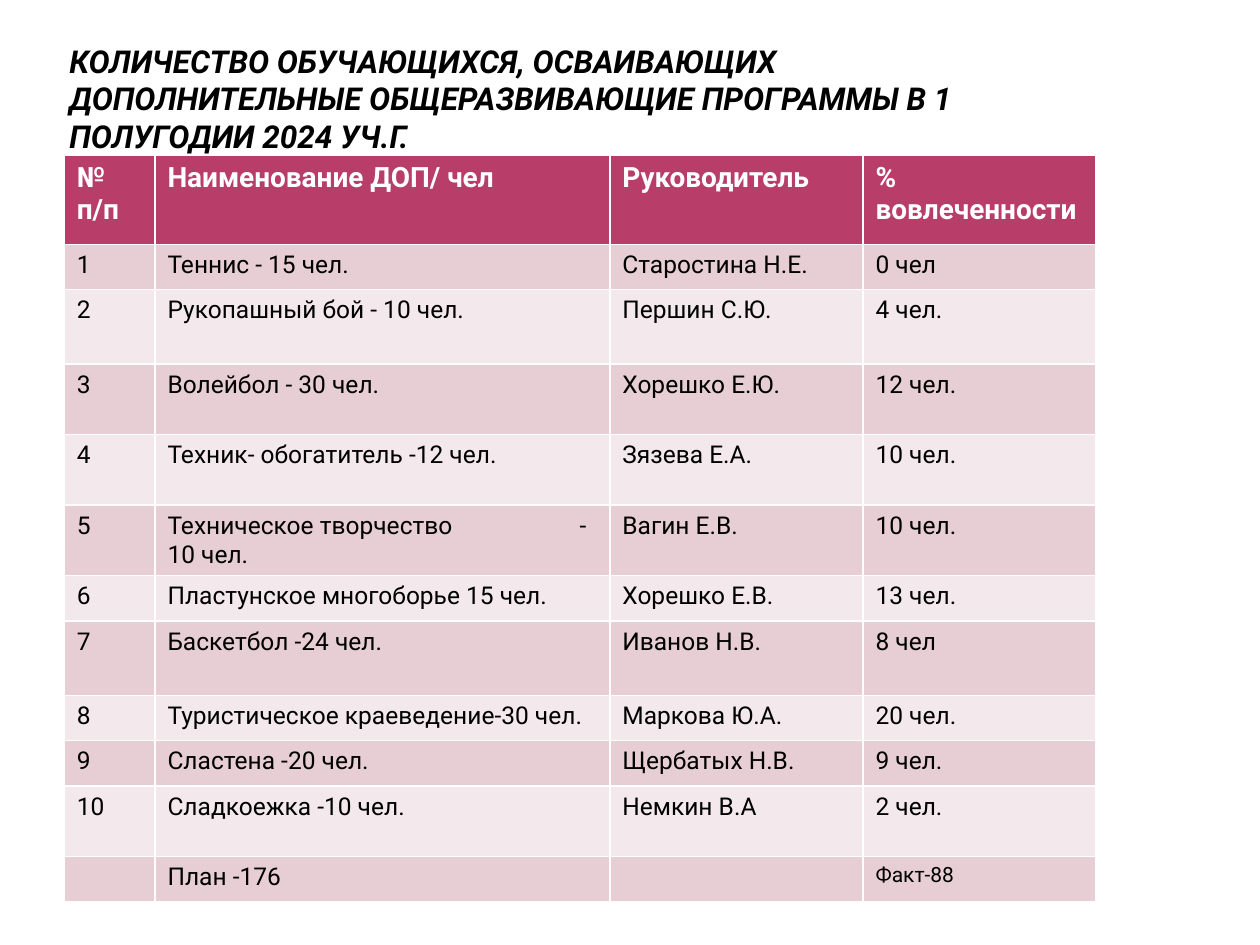
from lxml.etree import SubElement
from pptx import Presentation
from pptx.dml.color import RGBColor
from pptx.enum.text import MSO_ANCHOR, PP_ALIGN
from pptx.oxml.ns import qn
from pptx.util import Inches, Pt

BLACK = RGBColor(0x00, 0x00, 0x00)
WHITE = RGBColor(0xFF, 0xFF, 0xFF)
CRIMSON = RGBColor(0xB8, 0x3D, 0x68)
PINK = RGBColor(0xE6, 0xCE, 0xD4)
PALE_PINK = RGBColor(0xF3, 0xE8, 0xEB)
FONT = "Roboto"

HEADINGS = ("№ п/п", "Наименование ДОП/ чел", "Руководитель", "% вовлеченности")
COLUMN_WIDTHS = (0.72, 3.61, 2.01, 1.85)
HEADER_HEIGHT, LOW, MIDDLE, HIGH = 0.71, 0.36, 0.56, 0.59
DASH_TAB = 3.27

# Row height, programme, leader, involvement
PROGRAMMES = [
    (LOW, "Теннис - 15 чел.", "Старостина Н.Е.", "0 чел"),
    (HIGH, "Рукопашный бой - 10 чел.", "Першин С.Ю.", "4 чел."),
    (MIDDLE, "Волейбол - 30 чел.", "Хорешко Е.Ю.", "12 чел."),
    (MIDDLE, "Техник- обогатитель -12 чел.", "Зязева Е.А.", "10 чел."),
    (MIDDLE, "Техническое творчество\t- 10 чел.", "Вагин Е.В.", "10 чел."),
    (LOW, "Пластунское многоборье 15 чел.", "Хорешко Е.В.", "13 чел."),
    (HIGH, "Баскетбол -24 чел.", "Иванов Н.В.", "8 чел"),
    (LOW, "Туристическое краеведение-30 чел.", "Маркова Ю.А.", "20 чел."),
    (LOW, "Сластена -20 чел.", "Щербатых Н.В.", "9 чел."),
    (MIDDLE, "Сладкоежка -10 чел.", "Немкин В.А", "2 чел."),
]
TOTALS = ("", "План -176", "", "Факт-88")


def format_font(font, size, color, bold, italic=False):
    for name, value in {"name": FONT, "size": Pt(size), "bold": bold, "italic": italic}.items():
        setattr(font, name, value)
    font.color.rgb = color


prs = Presentation()
prs.slide_width, prs.slide_height = Inches(10), Inches(7.5)
slide = prs.slides.add_slide(prs.slide_layouts[5])

# Title
title = slide.shapes.title
title.left, title.top = Inches(0.5), Inches(0.35)
title.width, title.height = Inches(7.92), Inches(0.88)
frame_format = {
    "margin_left": Inches(0.05), "margin_right": Inches(0.05),
    "margin_top": 0, "margin_bottom": 0,
    "vertical_anchor": MSO_ANCHOR.BOTTOM, "word_wrap": True,
}
for name, value in frame_format.items():
    setattr(title.text_frame, name, value)
heading = title.text_frame.paragraphs[0]
heading.alignment = PP_ALIGN.LEFT
heading_run = heading.add_run()
heading_run.text = (
    "КОЛИЧЕСТВО ОБУЧАЮЩИХСЯ, ОСВАИВАЮЩИХ ДОПОЛНИТЕЛЬНЫЕ "
    "ОБЩЕРАЗВИВАЮЩИЕ ПРОГРАММЫ В 1 ПОЛУГОДИИ 2024 УЧ.Г."
)
format_font(heading_run.font, 18, BLACK, bold=True, italic=True)

# Programme table; the default table style supplies the white borders
rows = [HEADINGS]
rows += [(str(number), *texts) for number, (_, *texts) in enumerate(PROGRAMMES, 1)]
rows.append(TOTALS)
heights = [HEADER_HEIGHT, *(programme[0] for programme in PROGRAMMES), LOW]

programme_table = slide.shapes.add_table(
    len(rows), len(HEADINGS), Inches(0.51), Inches(1.23),
    Inches(sum(COLUMN_WIDTHS)), Inches(sum(heights)),
).table
for column, width in zip(programme_table.columns, COLUMN_WIDTHS):
    column.width = Inches(width)

for row_index, (texts, height) in enumerate(zip(rows, heights)):
    programme_table.rows[row_index].height = Inches(height)
    is_header = row_index == 0
    fill = CRIMSON if is_header else PINK if row_index % 2 else PALE_PINK
    for column_index, text in enumerate(texts):
        cell = programme_table.cell(row_index, column_index)
        cell.fill.solid()
        cell.fill.fore_color.rgb = fill
        paragraph = cell.text_frame.paragraphs[0]
        if not text:
            # Keeps the empty cell from stretching its row
            SubElement(paragraph._p, qn("a:endParaRPr"), sz="1400")
            continue
        if "\t" in text:
            tabs = SubElement(paragraph._p.get_or_add_pPr(), qn("a:tabLst"))
            SubElement(tabs, qn("a:tab"), pos=str(Inches(DASH_TAB)), algn="l")
        run = paragraph.add_run()
        run.text = text
        size = 16 if is_header else 12 if text == TOTALS[-1] else 14
        format_font(run.font, size, WHITE if is_header else BLACK, bold=is_header)

prs.save("out.pptx")
